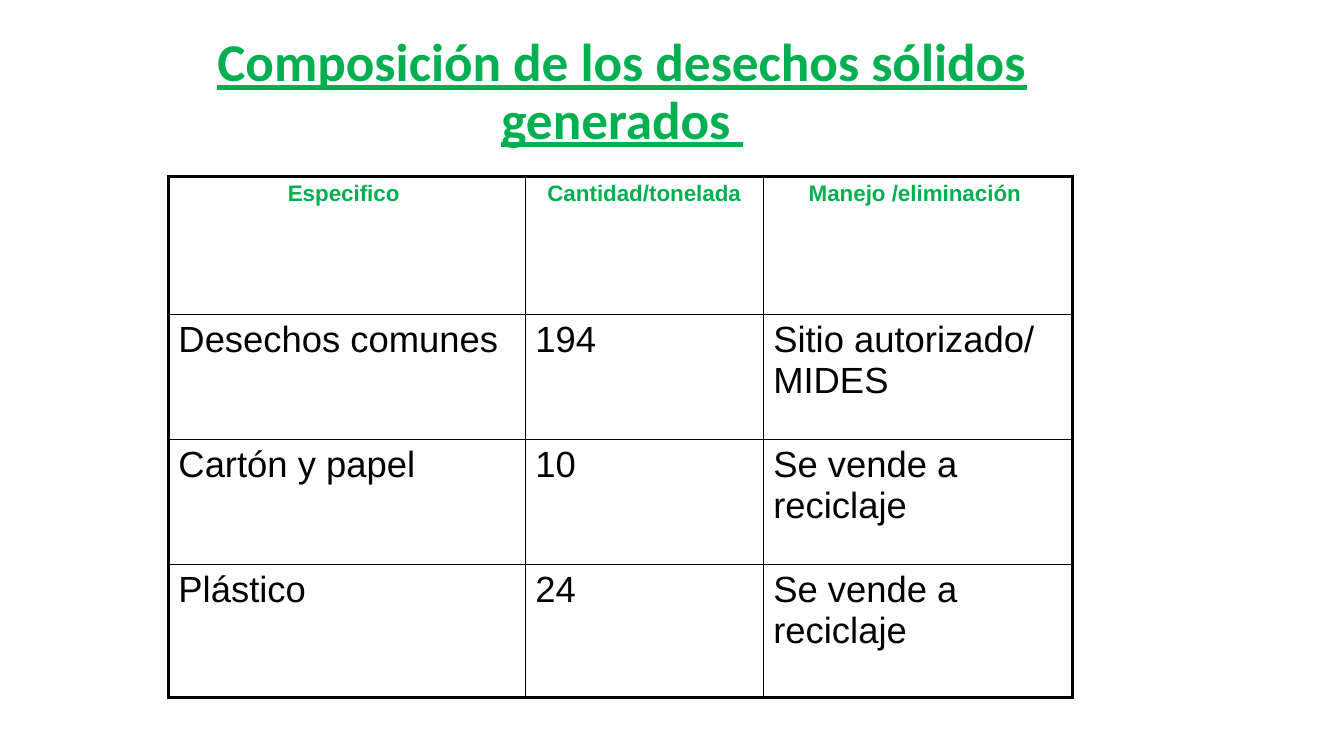
from lxml import etree
from pptx import Presentation
from pptx import util as u
from pptx.dml.color import RGBColor
from pptx.enum import text
from pptx.oxml.ns import qn

GREEN = RGBColor(0x00, 0xB0, 0x50)
BLACK = RGBColor(0, 0, 0)
THIN, THICK = 1, 2.25
COLS = [3.54, 2.36, 3.07]
TALLS = [1.37, 1.24, 1.24, 1.32]
WASTE = [
    ["Especifico ", "Cantidad/tonelada", "Manejo /eliminación "],
    ["Desechos comunes", "194", "Sitio autorizado/ MIDES"],
    ["Cartón y papel", "10", "Se vende a reciclaje"],
    ["Plástico", "24", "Se vende a reciclaje"],
]


def style(para, face, size, color, bold):
    for run in para.runs:
        font = run.font
        font.name, font.size, font.bold = face, u.Pt(size), bold
        font.color.rgb = color


def add_title(slide, words):
    title = slide.shapes.title
    title.left, title.top = u.Inches(1.67), u.Inches(0.3)
    title.width, title.height = u.Inches(9), u.Inches(1.25)
    frame = title.text_frame
    frame.text = words
    frame.word_wrap = True
    frame.auto_size = text.MSO_AUTO_SIZE.NONE
    frame.vertical_anchor = text.MSO_ANCHOR.MIDDLE
    para = frame.paragraphs[0]
    para.alignment = text.PP_ALIGN.CENTER
    para.line_spacing = 0.9
    style(para, "Calibri", 38, GREEN, True)
    para.runs[0].font.underline = True


def add_edges(cell, widths):
    props = cell._tc.get_or_add_tcPr()
    for spot, (tag, width) in enumerate(widths.items()):
        line = etree.Element(qn("a:" + tag), w=str(u.Pt(width)))
        fill = etree.SubElement(line, qn("a:solidFill"))
        etree.SubElement(fill, qn("a:srgbClr"), val=str(BLACK))
        props.insert(spot, line)


def fill_cell(cell, words, head):
    cell.fill.background()
    cell.text_frame.text = words
    para = cell.text_frame.paragraphs[0]
    space = etree.SubElement(para._p.get_or_add_pPr(), qn("a:spcBef"))
    etree.SubElement(space, qn("a:spcPct"), val="20000")
    if head:
        para.alignment = text.PP_ALIGN.CENTER
        style(para, "Arial", 16, GREEN, True)
    else:
        para.alignment = text.PP_ALIGN.LEFT
        style(para, "Arial", 26, BLACK, False)


def add_grid(slide, rows):
    last, end = len(rows) - 1, len(COLS) - 1
    frame = slide.shapes.add_table(
        len(rows), len(COLS), u.Inches(1.67), u.Inches(1.75),
        u.Inches(sum(COLS)), u.Inches(sum(TALLS)))
    table = frame.table
    table.first_row = table.horz_banding = False
    for col, width in zip(table.columns, COLS):
        col.width = u.Inches(width)
    for row, tall in zip(table.rows, TALLS):
        row.height = u.Inches(tall)
    for r, row in enumerate(rows):
        for c, words in enumerate(row):
            cell = table.cell(r, c)
            fill_cell(cell, words, r == 0)
            add_edges(cell, {
                "lnL": THICK if c == 0 else THIN,
                "lnR": THICK if c == end else THIN,
                "lnT": THICK if r == 0 else THIN,
                "lnB": THICK if r == last else THIN,
            })


def main():
    deck = Presentation()
    deck.slide_width, deck.slide_height = u.Inches(13.33), u.Inches(7.5)
    slide = deck.slides.add_slide(deck.slide_layouts[5])
    add_title(slide, "Composición de los desechos sólidos generados ")
    add_grid(slide, WASTE)
    deck.save("out.pptx")


if __name__ == "__main__":
    main()
